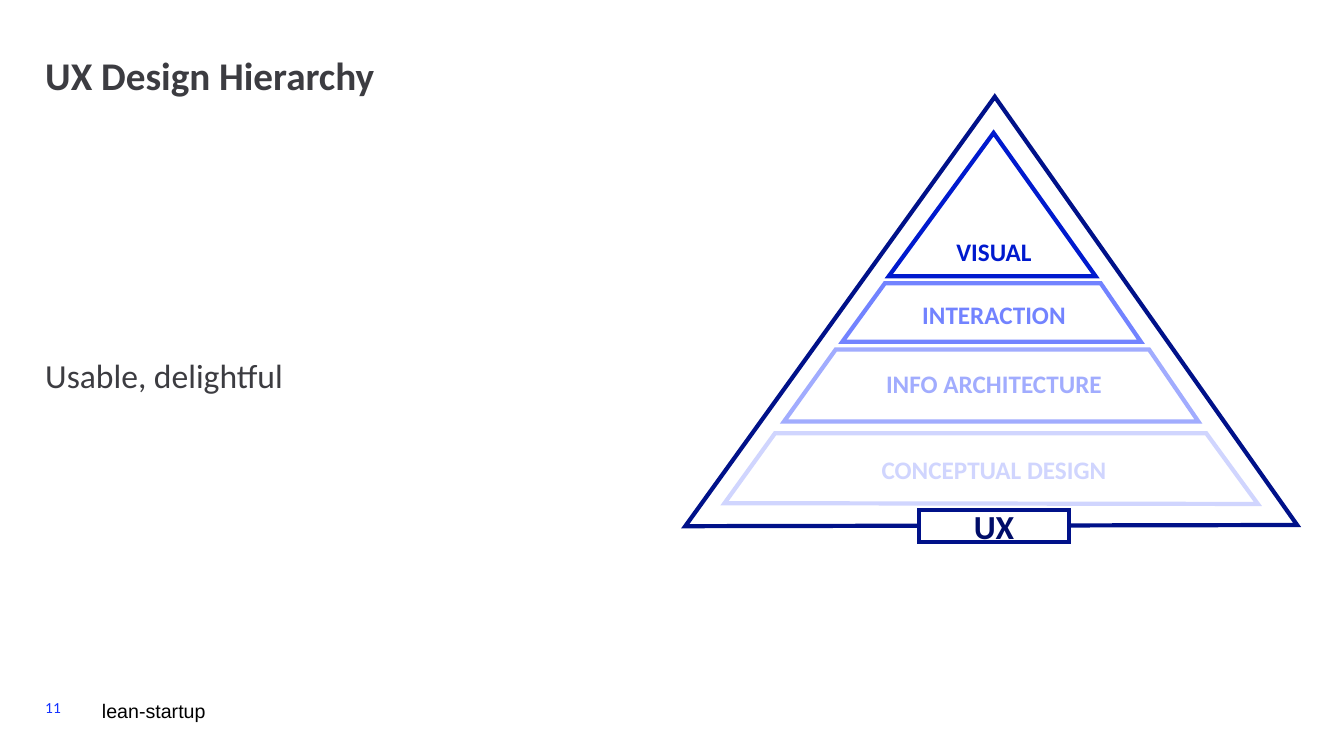
from lxml import etree
from pptx import Presentation
from pptx.dml.color import RGBColor
from pptx.enum.shapes import MSO_SHAPE
from pptx.enum.text import MSO_ANCHOR, MSO_AUTO_SIZE, PP_ALIGN
from pptx.oxml.ns import qn
from pptx.util import Cm, Pt

WHITE = RGBColor(0xFF, 0xFF, 0xFF)
BLACK = RGBColor(0, 0, 0)
GREY = RGBColor(0x3C, 0x3C, 0x41)
BLUE = RGBColor(0x14, 0x32, 0xFF)
NAVY = RGBColor(0x00, 0x11, 0x89)
DARK_NAVY = RGBColor(0x00, 0x0D, 0x68)
VISUAL = RGBColor(0x00, 0x1A, 0xCE)
INTERACTION = RGBColor(0x72, 0x83, 0xFF)
ARCHITECTURE = RGBColor(0xA1, 0xAC, 0xFE)
CONCEPT = RGBColor(0xD0, 0xD5, 0xFE)

AXIS = 25.05  # centre line of the pyramid, cm
LABEL_H = 0.81


def write(sp, text, size, color, bold=False, font="Calibri",
          align=PP_ALIGN.LEFT, anchor=MSO_ANCHOR.TOP):
    """Put one run of text into a shape without insets."""
    tf = sp.text_frame
    tf.word_wrap = True
    tf.auto_size = MSO_AUTO_SIZE.NONE
    tf.vertical_anchor = anchor
    tf.margin_left = tf.margin_right = tf.margin_top = tf.margin_bottom = 0
    p = tf.paragraphs[0]
    p.alignment = align
    r = p.add_run()
    r.text = text
    r.font.name, r.font.size, r.font.bold = font, Pt(size), bold
    r.font.color.rgb = color
    return p


def outline(sp, color):
    """Give a shape a 3 pt line with sharp corners and no shadow."""
    sp.shadow.inherit = False
    sp.line.color.rgb = color
    sp.line.width = Pt(3)
    ln = sp.line._get_or_add_ln()
    etree.SubElement(ln, qn("a:miter"), lim="800000")


prs = Presentation()
prs.slide_width, prs.slide_height = Cm(33.87), Cm(19.05)
s = prs.slides.add_slide(prs.slide_layouts[1])

# Title and statement
title, body = s.shapes.title, s.placeholders[1]
title.left, title.top, title.width, title.height = Cm(1.14), Cm(1.42), Cm(31.57), Cm(2.16)
p = write(title, "UX Design Hierarchy", 28, GREY, bold=True)
p.line_spacing = 0.9

body.left, body.top, body.width, body.height = Cm(1.14), Cm(4.22), Cm(13.44), Cm(10.59)
p = write(body, "Usable, delightful", 24, GREY, anchor=MSO_ANCHOR.MIDDLE)
p.line_spacing = 0.9
p.space_before = Pt(0)
pPr = p._p.get_or_add_pPr()
pPr.set("marL", "0")
pPr.set("indent", "0")
etree.SubElement(pPr, qn("a:buNone"))

# Pyramid: four layers inside an outer triangle
polygons = [
    (VISUAL, [(22.4, 6.96), (25.04, 3.35), (27.61, 6.96)]),
    (INTERACTION, [(22.3, 7.14), (27.74, 7.14), (28.75, 8.61), (21.23, 8.61)]),
    (ARCHITECTURE, [(21.06, 8.81), (28.96, 8.81), (30.2, 10.62), (19.76, 10.62)]),
    (CONCEPT, [(19.53, 10.92), (30.4, 10.92), (31.7, 12.7), (18.26, 12.68)]),
    (NAVY, [(17.27, 13.26), (25.07, 2.44), (32.69, 13.23)]),
]
for color, corners in polygons:
    points = [(Cm(x), Cm(y)) for x, y in corners]
    builder = s.shapes.build_freeform(*points[0])
    builder.add_line_segments(points[1:], close=True)
    sp = builder.convert_to_shape()
    sp.fill.background()
    outline(sp, color)

labels = [
    ("VISUAL", VISUAL, 5.92, 3.78),
    ("INTERACTION", INTERACTION, 7.52, 5.03),
    ("INFO ARCHITECTURE", ARCHITECTURE, 9.27, 6.1),
    ("CONCEPTUAL DESIGN", CONCEPT, 11.43, 6.71),
]
for text, color, top, width in labels:
    label = s.shapes.add_textbox(Cm(AXIS - width / 2), Cm(top), Cm(width), Cm(LABEL_H))
    write(label, text, 18, color, bold=True, align=PP_ALIGN.CENTER, anchor=MSO_ANCHOR.MIDDLE)

badge = s.shapes.add_shape(MSO_SHAPE.RECTANGLE, Cm(AXIS - 1.89), Cm(12.85), Cm(3.78), Cm(LABEL_H))
badge.fill.solid()
badge.fill.fore_color.rgb = WHITE
outline(badge, NAVY)
write(badge, "UX", 24, DARK_NAVY, bold=True, align=PP_ALIGN.CENTER, anchor=MSO_ANCHOR.MIDDLE)

# Footer
number = s.shapes.add_textbox(Cm(1.14), Cm(17.6), Cm(1.4), Cm(0.76))
write(number, "11", 11, BLUE)
footer = s.shapes.add_textbox(Cm(2.57), Cm(17.6), Cm(10.08), Cm(0.76))
write(footer, "lean-startup", 14, BLACK, font="Arial")

prs.save("out.pptx")
